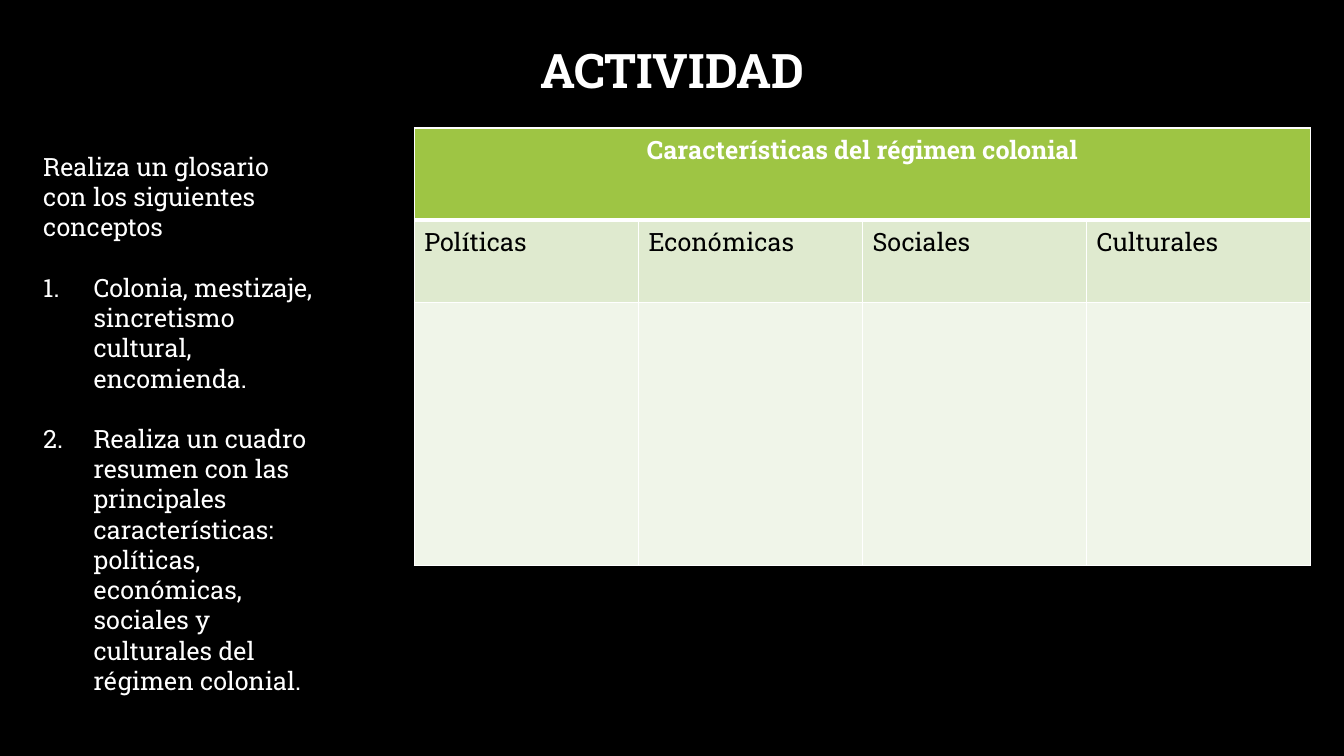
from dataclasses import dataclass

from pptx import Presentation
from pptx.dml.color import RGBColor as RGB
from pptx.enum.text import MSO_ANCHOR as ANCHOR, PP_ALIGN as ALIGN
from pptx.oxml.ns import qn
from pptx.util import Inches, Pt
from lxml import etree


@dataclass(frozen=True)
class Theme:
    font: str = "Roboto Slab"
    black: str = "000000"
    white: str = "FFFFFF"
    header: str = "9EC544"
    subheader: str = "DFEACF"
    body: str = "F0F5E9"
    title_size: int = 34
    text_size: int = 18
    line_gap: float = 21.6
    thin: int = 1
    thick: int = 3


T = Theme()

INTRO = "Realiza un glosario con los siguientes conceptos"
TASKS = [
    "Colonia, mestizaje, sincretismo cultural, encomienda.",
    "Realiza un cuadro resumen con las principales características: "
    "políticas, económicas, sociales y culturales del régimen colonial.",
]
TABLE_TITLE = "Características del régimen colonial"
ASPECTS = ["Políticas", "Económicas", "Sociales", "Culturales"]
ROW_HEIGHTS = [0.91, 0.82, 2.61]


def write(p, text, color, size=T.text_size, bold=False):
    r = p.add_run()
    r.text = text
    for name, value in dict(name=T.font, size=Pt(size), bold=bold).items():
        setattr(r.font, name, value)
    r.font.color.rgb = RGB.from_string(color)


def add_text_frame(slide, box, anchor):
    tf = slide.shapes.add_textbox(*map(Inches, box)).text_frame
    tf.word_wrap = True
    tf.vertical_anchor = anchor
    return tf


def add_title(slide, box, text):
    p = add_text_frame(slide, box, ANCHOR.MIDDLE).paragraphs[0]
    p.alignment = ALIGN.CENTER
    p.line_spacing = 0.9
    write(p, text, T.white, T.title_size, True)


def number_paragraph(p):
    pPr = p._p.get_or_add_pPr()
    pPr.set("marL", str(Inches(0.5)))
    pPr.set("indent", str(Inches(-0.5)))
    etree.SubElement(pPr, qn("a:buFont"), typeface="+mj-lt")
    etree.SubElement(pPr, qn("a:buAutoNum"), type="arabicPeriod")


def add_instructions(slide, box, intro, tasks):
    tf = add_text_frame(slide, box, ANCHOR.TOP)
    write(tf.paragraphs[0], intro, T.white)
    for task in tasks:
        p = tf.add_paragraph()
        p.space_before = Pt(T.line_gap)
        number_paragraph(p)
        write(p, task, T.white)


def set_borders(cell, top, bottom):
    tcPr = cell._tc.get_or_add_tcPr()
    for side, width in dict(L=T.thin, R=T.thin, T=top, B=bottom).items():
        ln = etree.SubElement(tcPr, qn(f"a:ln{side}"), w=str(Pt(width)))
        fill = etree.SubElement(ln, qn("a:solidFill"))
        etree.SubElement(fill, qn("a:srgbClr"), val=T.white)


def add_summary_table(slide, box, title, aspects):
    fills = [T.header, T.subheader, T.body]
    table = slide.shapes.add_table(
        len(fills), len(aspects), *map(Inches, box)).table
    for row, height in zip(table.rows, ROW_HEIGHTS):
        row.height = Inches(height)

    # Fills and borders, with a thick rule under the header
    for i, fill in enumerate(fills):
        for cell in table.rows[i].cells:
            set_borders(cell, T.thick if i == 1 else T.thin,
                        T.thick if i == 0 else T.thin)
            cell.fill.solid()
            cell.fill.fore_color.rgb = RGB.from_string(fill)

    # Header across all columns
    header = table.cell(0, 0)
    header.merge(table.cell(0, len(aspects) - 1))
    p = header.text_frame.paragraphs[0]
    p.alignment = ALIGN.CENTER
    write(p, title, T.white, bold=True)

    # Column names
    for cell, aspect in zip(table.rows[1].cells, aspects):
        write(cell.text_frame.paragraphs[0], aspect, T.black)


def add_activity_slide(prs):
    slide = prs.slides.add_slide(prs.slide_layouts[6])
    slide.background.fill.solid()
    slide.background.fill.fore_color.rgb = RGB.from_string(T.black)
    add_title(slide, (1.01, 0, 11.32, 1.45), "ACTIVIDAD")
    add_instructions(slide, (0.33, 1.45, 2.9, 5.55), INTRO, TASKS)
    add_summary_table(slide, (4.11, 1.27, 8.89, sum(ROW_HEIGHTS)),
                      TABLE_TITLE, ASPECTS)


def main():
    prs = Presentation()
    prs.slide_width, prs.slide_height = Inches(13.33), Inches(7.5)
    add_activity_slide(prs)
    prs.save("out.pptx")


if __name__ == "__main__":
    main()
